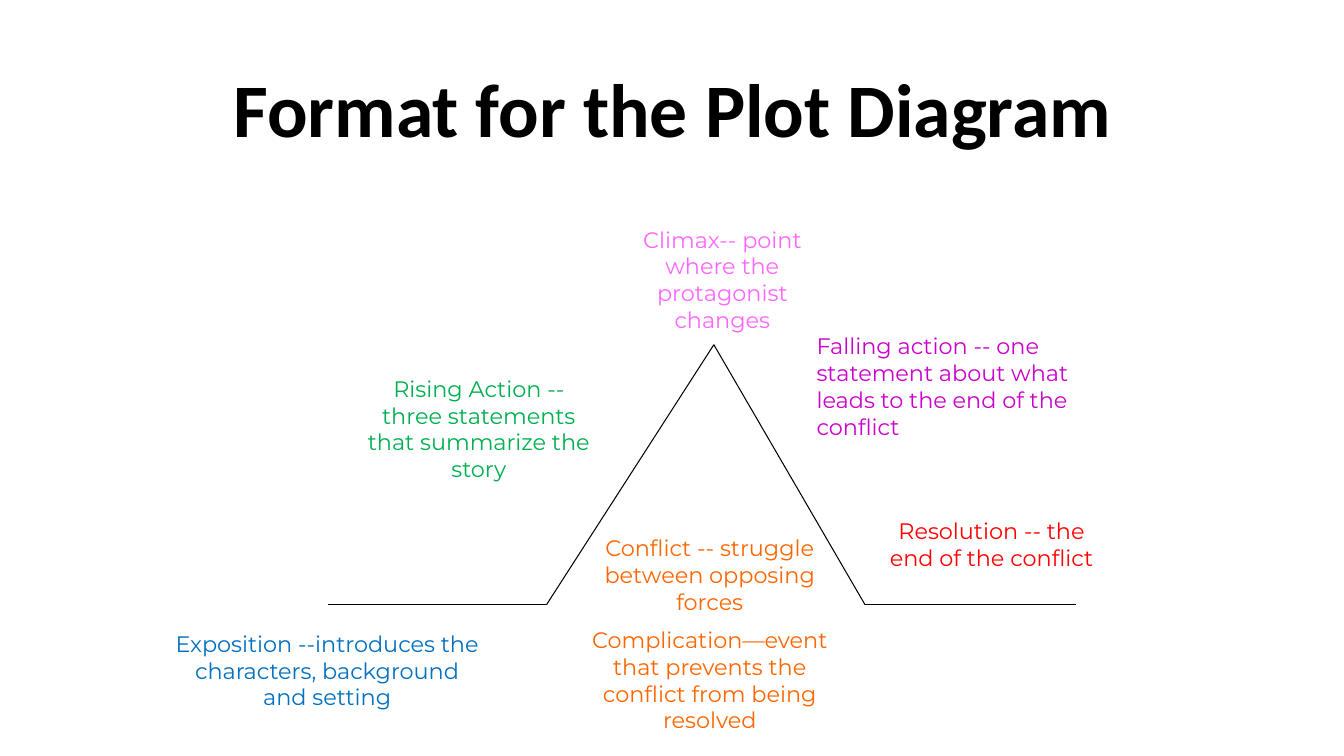
from itertools import pairwise

from lxml import etree
from pptx import Presentation
from pptx.dml.color import RGBColor
from pptx.enum.shapes import MSO_CONNECTOR
from pptx.enum.text import MSO_ANCHOR, MSO_AUTO_SIZE, PP_ALIGN
from pptx.oxml.ns import qn
from pptx.util import Inches, Pt


def color(value):
    return RGBColor.from_string(value)


def format_text(para, font, size, value, align, bold=False):
    para.alignment = align
    for span in para.runs:
        span.font.name = font
        span.font.size = Pt(size)
        span.font.bold = bold
        span.font.color.rgb = color(value)


deck = Presentation()
deck.slide_width = Inches(13.33)
deck.slide_height = Inches(7.5)
page = deck.slides.add_slide(deck.slide_layouts[5])

title = page.shapes.title
title.left, title.top = Inches(0.92), Inches(0.4)
title.width, title.height = Inches(11.5), Inches(1.45)
title.text_frame.text = "Format for the Plot Diagram"
title.text_frame.auto_size = MSO_AUTO_SIZE.NONE
title.text_frame.vertical_anchor = MSO_ANCHOR.MIDDLE
title.text_frame.paragraphs[0].line_spacing = 0.9
format_text(title.text_frame.paragraphs[0], "Calibri", 54, "000000", PP_ALIGN.CENTER, True)

plot_points = [(3.25, 6), (5.42, 6), (7.08, 3.42), (8.58, 6), (10.67, 6)]
for start, end in pairwise(plot_points):
    line = page.shapes.add_connector(
        MSO_CONNECTOR.STRAIGHT, *(Inches(value) for value in start + end)
    )
    line.line.color.rgb = color("000000")
    line.line.width = Pt(0.75)
    etree.SubElement(line._element.spPr, qn("a:effectLst"))

stages = [
    (1.62, 6.2, 3.25, 0.9, "0070C0", PP_ALIGN.CENTER,
     ["Exposition --introduces the characters, background and setting"]),
    (5.75, 5.25, 2.58, 2.52, "FF6600", PP_ALIGN.CENTER,
     ["Conflict -- struggle between opposing forces",
      "Complication—event that prevents the conflict from being resolved"]),
    (3.5, 3.67, 2.5, 1.17, "00B050", PP_ALIGN.CENTER,
     ["Rising Action -- three statements that summarize the story"]),
    (6, 2.19, 2.33, 1.17, "FF66FF", PP_ALIGN.CENTER,
     ["Climax-- point where the protagonist changes"]),
    (8, 3.25, 2.75, 1.17, "CC00CC", PP_ALIGN.LEFT,
     ["Falling action -- one statement about what leads to the end of the conflict"]),
    (8.67, 5.08, 2.33, 0.9, "FF0000", PP_ALIGN.CENTER,
     ["Resolution -- the end of the conflict"]),
]
for left, top, width, height, value, align, texts in stages:
    box = page.shapes.add_textbox(Inches(left), Inches(top), Inches(width), Inches(height))
    box.text_frame.word_wrap = True
    box.text_frame.auto_size = MSO_AUTO_SIZE.SHAPE_TO_FIT_TEXT
    box.text_frame.text = "\n".join(texts)
    for para in box.text_frame.paragraphs:
        para.space_before = Pt(8)
        format_text(para, "Montserrat", 16, value, align)

deck.save("out.pptx")
